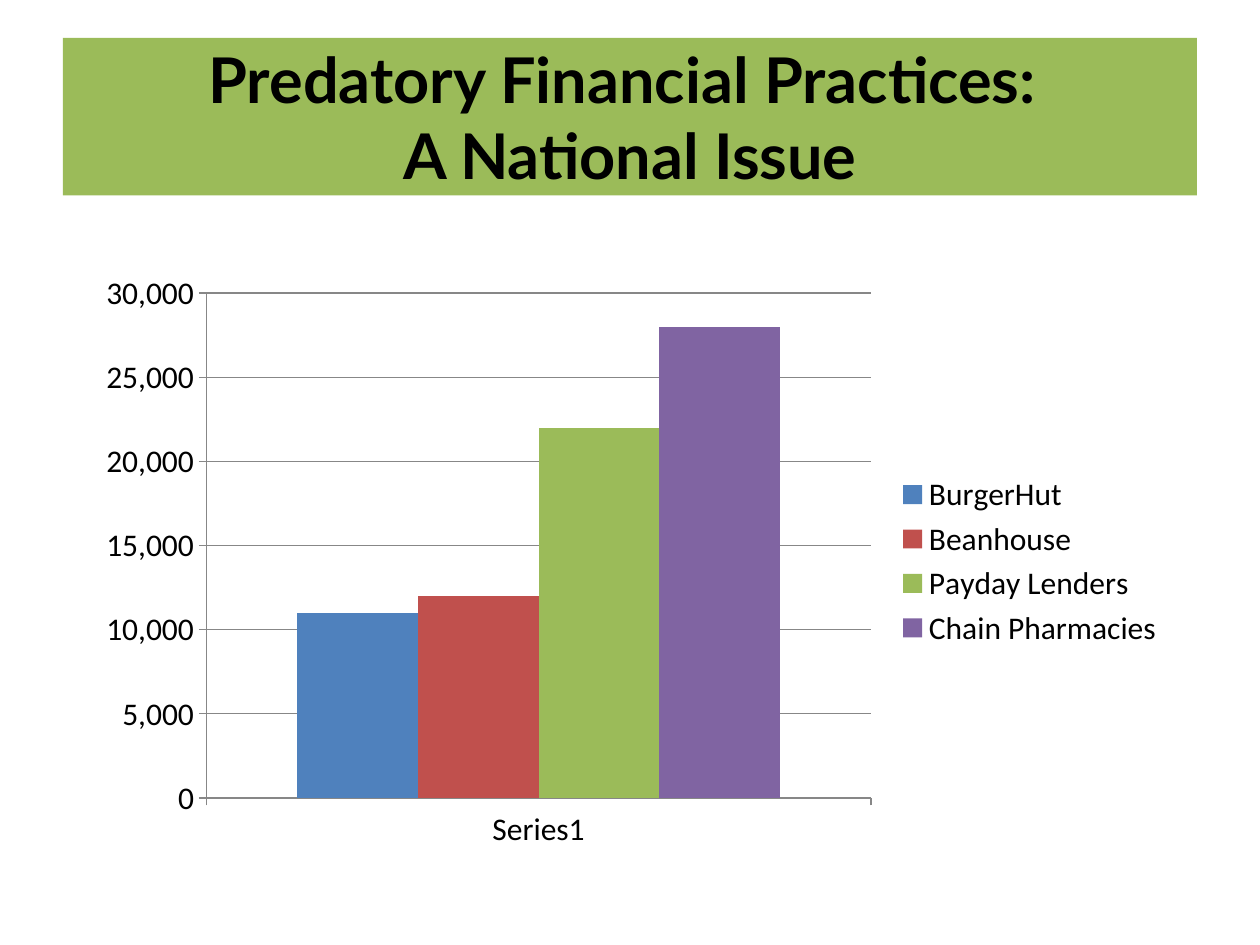
from pptx import Presentation
from pptx.chart.data import CategoryChartData
from pptx.dml.color import RGBColor
from pptx.enum.chart import XL_CHART_TYPE, XL_LEGEND_POSITION, XL_TICK_MARK
from pptx.enum.shapes import MSO_SHAPE
from pptx.enum.text import MSO_ANCHOR, PP_ALIGN
from pptx.util import Inches, Pt

BLACK, GREEN, GRAY = "000000", "9BBB59", "878787"
OUTLETS = [
    ("BurgerHut", 11000, "4F81BD"),
    ("Beanhouse", 12000, "C0504D"),
    ("Payday Lenders", 22000, GREEN),
    ("Chain Pharmacies", 28000, "8064A2"),
]


def color(hex_value):
    return RGBColor.from_string(hex_value)


def set_format(target, values):
    for name, value in values.items():
        setattr(target, name, value)


def fill_solid(target, hex_value):
    target.fill.solid()
    target.fill.fore_color.rgb = color(hex_value)


def set_font(font, **values):
    set_format(font, values)
    font.color.rgb = color(BLACK)


def add_title(slide, text, left, top, width, height):
    shape = slide.shapes.add_shape(
        MSO_SHAPE.RECTANGLE, Inches(left), Inches(top), Inches(width), Inches(height))
    shape.shadow.inherit = False
    fill_solid(shape, GREEN)
    shape.line.fill.background()
    set_format(shape.text_frame, {"word_wrap": True, "vertical_anchor": MSO_ANCHOR.MIDDLE})
    paragraph = shape.text_frame.paragraphs[0]
    paragraph.text = text
    paragraph.alignment = PP_ALIGN.CENTER
    for run in paragraph.runs:
        set_font(run.font, name="Lato", size=Pt(36), bold=True)


def format_axis(axis):
    set_format(axis, {"major_tick_mark": XL_TICK_MARK.OUTSIDE,
                      "minor_tick_mark": XL_TICK_MARK.NONE})
    axis.format.line.color.rgb = color(GRAY)


def add_outlet_chart(slide, left, top, width, height):
    data = CategoryChartData(number_format="#,##0")
    data.categories = ["Series1"]
    for name, count, _ in OUTLETS:
        data.add_series(name, [count])
    chart = slide.shapes.add_chart(
        XL_CHART_TYPE.COLUMN_CLUSTERED, Inches(left), Inches(top),
        Inches(width), Inches(height), data).chart
    set_format(chart, {"has_title": False, "has_legend": True})
    set_font(chart.font, name="Calibri", size=Pt(18))
    set_format(chart.legend, {"position": XL_LEGEND_POSITION.RIGHT,
                              "include_in_layout": False})

    plot = chart.plots[0]
    set_format(plot, {"gap_width": 150, "overlap": 0, "vary_by_categories": False})
    for series, (_, _, hex_value) in zip(plot.series, OUTLETS):
        fill_solid(series.format, hex_value)

    for axis in (chart.category_axis, chart.value_axis):
        format_axis(axis)
    value_axis = chart.value_axis
    set_format(value_axis, {"minimum_scale": 0, "maximum_scale": 30000,
                            "major_unit": 5000, "has_major_gridlines": True})
    value_axis.major_gridlines.format.line.color.rgb = color(GRAY)
    set_format(value_axis.tick_labels, {"number_format": "#,##0",
                                        "number_format_is_linked": False})


def main():
    presentation = Presentation()
    set_format(presentation, {"slide_width": Inches(10), "slide_height": Inches(7.5)})
    slide = presentation.slides.add_slide(presentation.slide_layouts[6])
    add_title(slide, "Predatory Financial Practices: \vA National Issue", 0.5, 0.3, 9, 1.25)
    add_outlet_chart(slide, 0.67, 2.08, 8.67, 4.75)
    presentation.save("out.pptx")


if __name__ == "__main__":
    main()
